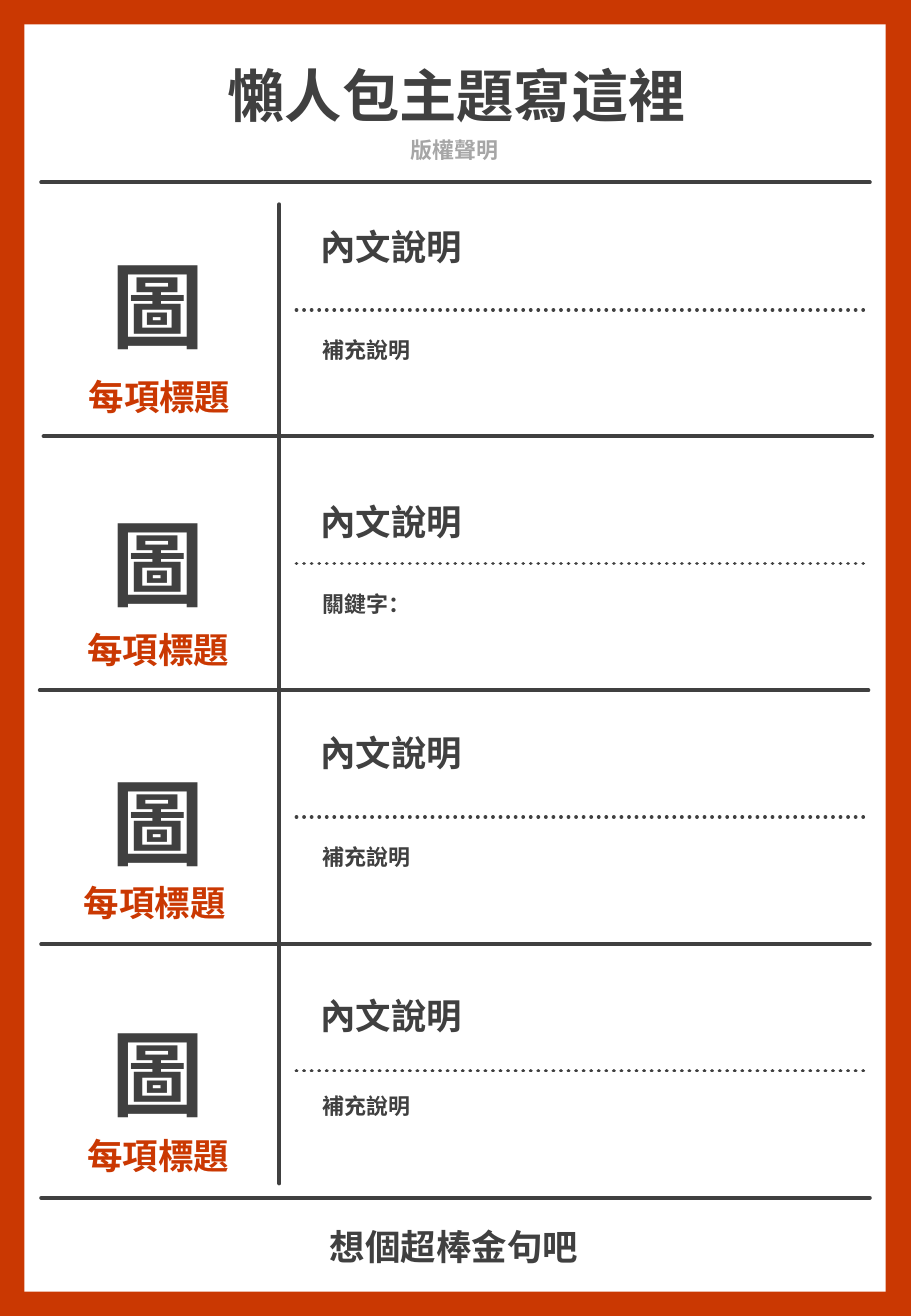
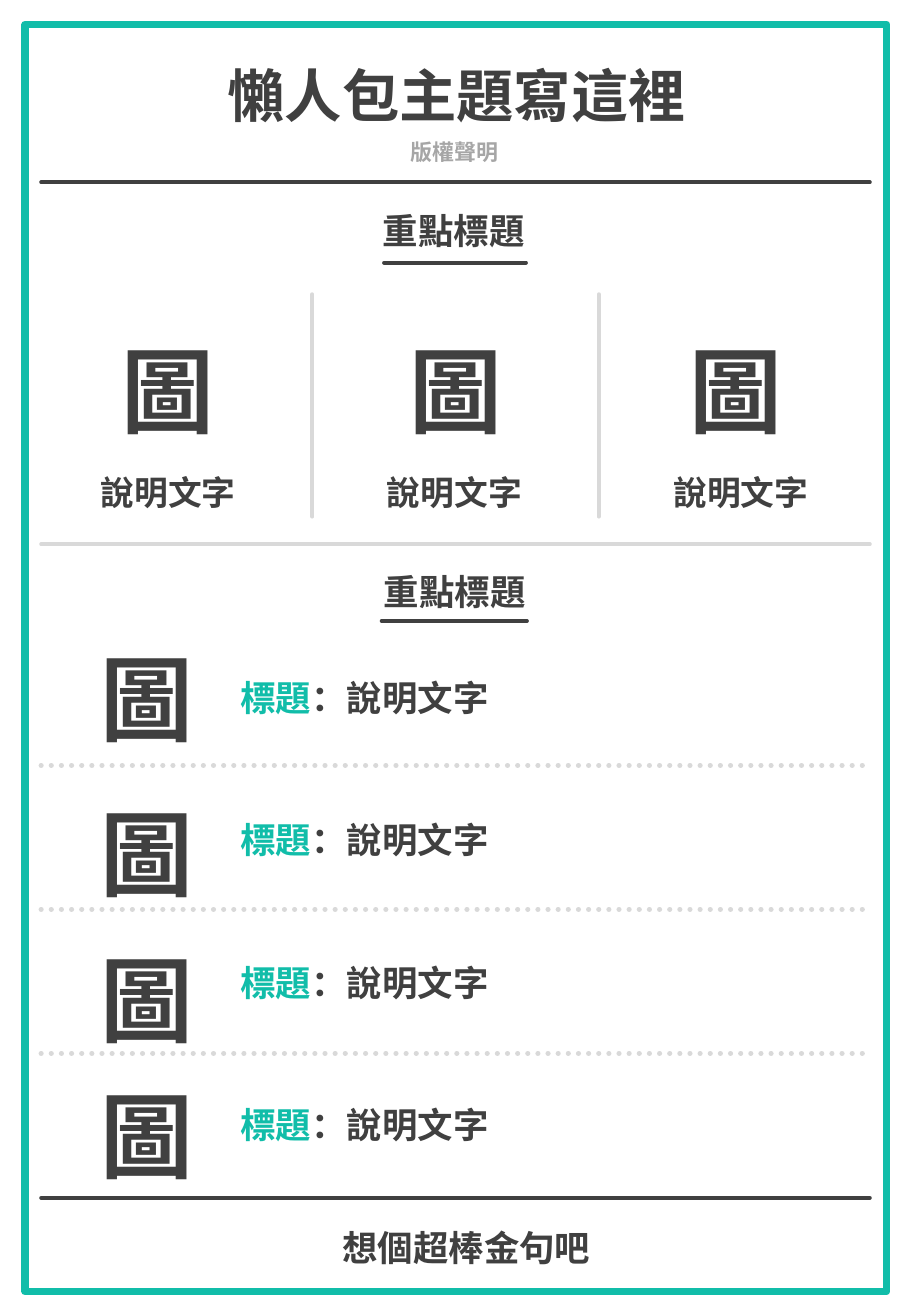
from dataclasses import dataclass

from lxml.etree import SubElement
from pptx import Presentation
from pptx.dml.color import RGBColor
from pptx.enum.dml import MSO_LINE
from pptx.enum.shapes import MSO_CONNECTOR, MSO_SHAPE
from pptx.enum.text import MSO_ANCHOR, MSO_AUTO_SIZE, PP_ALIGN
from pptx.oxml.ns import qn
from pptx.util import Cm, Pt


@dataclass(frozen=True)
class Theme:
    font: str = "Noto Sans CJK SC"
    ink: str = "404040"
    muted: str = "A6A6A6"
    pale: str = "D9D9D9"
    white: str = "FFFFFF"
    orange: str = "CA3802"
    teal: str = "11BDA9"
    title: int = 34
    icon: int = 55
    heading: int = 21
    caption: int = 20
    note: int = 13


THEME = Theme()
LEFT, RIGHT = 0.86, 18.19
HEADER_LINE, FOOTER_LINE = 3.81, 25.04
CM_PER_POINT = 2.54 / 72


class Poster:
    def __init__(self, deck, theme):
        self.deck = deck
        self.theme = theme
        self.page = None

    def start(self, background):
        self.page = self.deck.slides.add_slide(self.deck.slide_layouts[5])
        fill = self.page.background.fill
        fill.solid()
        fill.fore_color.rgb = RGBColor.from_string(background)

    def frame(self, left, fill=None, outline=None):
        box = self.page.shapes.add_shape(
            MSO_SHAPE.RECTANGLE, Cm(left), Cm(0.51), Cm(18.01), Cm(26.49))
        box.shadow.inherit = False
        if fill:
            box.fill.solid()
            box.fill.fore_color.rgb = RGBColor.from_string(fill)
        else:
            box.fill.background()
        if outline:
            box.line.color.rgb = RGBColor.from_string(outline)
            box.line.width = Pt(4.5)
        else:
            box.line.fill.background()
        self.page.shapes.title.element.addprevious(box.element)

    def set_text(self, box, runs, size, align, spacing=None, wrap=False):
        frame = box.text_frame
        frame.word_wrap = wrap
        frame.auto_size = MSO_AUTO_SIZE.SHAPE_TO_FIT_TEXT
        frame.vertical_anchor = MSO_ANCHOR.TOP
        para = frame.paragraphs[0]
        para.alignment = align
        if spacing:
            para.line_spacing = spacing
        for words, color in runs:
            span = para.add_run()
            span.text = words
            span.font.name = self.theme.font
            span.font.size = Pt(size)
            span.font.bold = True
            span.font.color.rgb = RGBColor.from_string(color)
        for properties in box.element.iter(qn("a:rPr")):
            SubElement(properties, qn("a:ea")).set("typeface", self.theme.font)

    def title(self, words):
        box = self.page.shapes.title
        box.left, box.top, box.width, box.height = Cm(2.64), Cm(1.12), Cm(13.82), Cm(1.7)
        self.set_text(box, [(words, self.theme.ink)], self.theme.title,
                      PP_ALIGN.CENTER, wrap=True)

    def text(self, left, top, runs, size, align=PP_ALIGN.LEFT, spacing=None):
        if isinstance(runs, str):
            runs = [(runs, self.theme.ink)]
        count = sum(len(words) for words, _ in runs)
        width = count * size * CM_PER_POINT + 0.51
        height = size * CM_PER_POINT * (1.66 if spacing else 1.2) + 0.25
        box = self.page.shapes.add_textbox(Cm(left), Cm(top), Cm(width), Cm(height))
        self.set_text(box, runs, size, align, spacing)

    def icon(self, left, top):
        self.text(left, top, "圖", self.theme.icon, spacing=1.5)

    def line(self, x1, y1, x2, y2, color=None, width=2.25, dotted=False):
        rule = self.page.shapes.add_connector(
            MSO_CONNECTOR.STRAIGHT, Cm(x1), Cm(y1), Cm(x2), Cm(y2))
        rule.line.color.rgb = RGBColor.from_string(color or self.theme.ink)
        rule.line.width = Pt(width)
        if dotted:
            rule.line.dash_style = MSO_LINE.ROUND_DOT
        properties = rule.element.spPr
        properties.find(qn("a:ln")).set("cap", "rnd")
        SubElement(properties, qn("a:effectLst"))

    def shared_parts(self, notice_top, slogan_left, slogan_top):
        self.title("懶人包主題寫這裡")
        self.text(8.33, notice_top, [("版權聲明", self.theme.muted)],
                  self.theme.note, PP_ALIGN.CENTER)
        for y in (HEADER_LINE, FOOTER_LINE):
            self.line(LEFT, y, RIGHT, y)
        self.text(slogan_left, slogan_top, "想個超棒金句吧", self.theme.heading)


def build_rows(poster):
    theme = poster.theme
    poster.start(theme.orange)
    poster.frame(0.51, fill=theme.white)
    poster.shared_parts(2.74, 6.65, 25.48)
    poster.line(5.84, 4.27, 5.84, 24.74)
    for index, shift in enumerate((0.05, -0.03, 0), 1):
        y = HEADER_LINE + 5.31 * index
        poster.line(LEFT + shift, y, RIGHT + shift, y)
    rows = [
        (3.91, 1.6, 4.57, None, "補充說明", 6.91),
        (9.3, 1.57, 9.88, 1.5, "關鍵字：", 12.22),
        (14.71, 1.5, 15.16, None, "補充說明", 17.5),
        (19.96, 1.57, 20.22, 1.5, "補充說明", 22.71),
    ]
    for index, (icon_top, label_left, body_top, spacing, note, note_top) in enumerate(rows):
        dots = 6.48 + 5.3 * index
        poster.line(6.2, dots, 18.16, dots, dotted=True)
        poster.icon(2.08, icon_top)
        poster.text(label_left, 7.72 + 5.29 * index, [("每項標題", theme.orange)],
                    theme.heading, PP_ALIGN.CENTER)
        poster.text(6.45, body_top, "內文說明", theme.heading, spacing=spacing)
        poster.text(6.5, note_top, note, theme.note)


def build_sections(poster):
    theme = poster.theme
    poster.start(theme.white)
    poster.frame(0.53, outline=theme.teal)
    poster.shared_parts(2.77, 6.91, 25.5)
    poster.line(LEFT, 11.38, RIGHT, 11.38, theme.pale)
    for left, top, x1, x2, y in ((7.75, 4.24, 8.03, 11, 5.49),
                                 (7.77, 11.79, 7.98, 11.02, 12.98)):
        poster.text(left, top, "重點標題", theme.heading, PP_ALIGN.CENTER)
        poster.line(x1, y, x2, y)
    for x in (6.53, 12.52):
        poster.line(x, 6.15, x, 10.8, theme.pale)
    for index, icon_left in enumerate((2.29, 8.31, 14.17)):
        poster.icon(icon_left, 5.69)
        poster.text(1.85 + 5.99 * index, 9.73, "說明文字", theme.caption, PP_ALIGN.CENTER)
    for index in range(3):
        y = 16 + 3.01 * index
        poster.line(LEFT, y, RIGHT, y, theme.pale, 3, dotted=True)
    for index, icon_top in enumerate((12.12, 15.37, 18.42, 21.26)):
        poster.icon(1.85, icon_top)
        poster.text(4.78, 14 + 2.98 * index,
                    [("標題", theme.teal), ("：說明文字", theme.ink)], theme.heading)


def main():
    deck = Presentation()
    deck.slide_width, deck.slide_height = Cm(19.05), Cm(27.51)
    poster = Poster(deck, THEME)
    build_rows(poster)
    build_sections(poster)
    deck.save("out.pptx")


if __name__ == "__main__":
    main()
